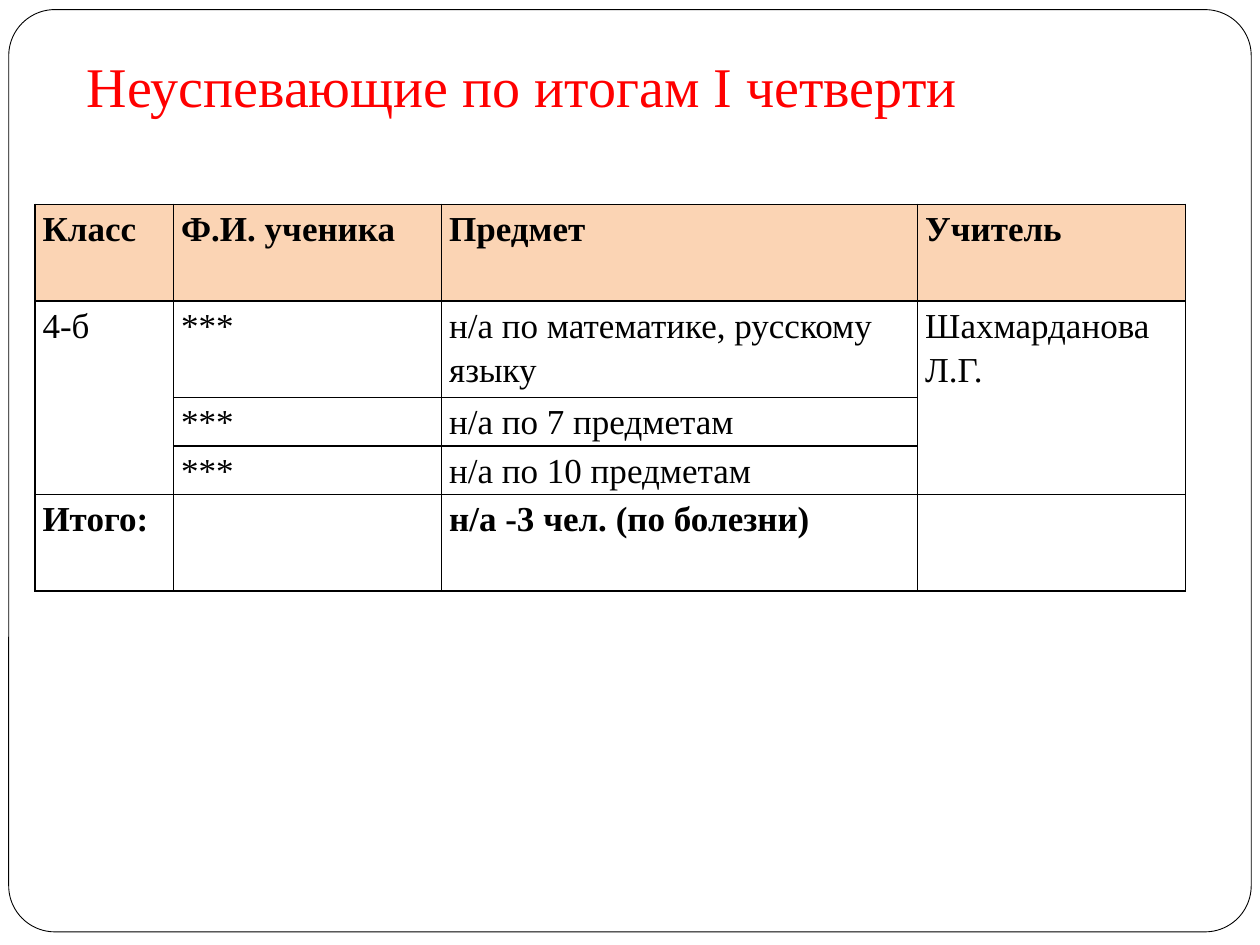
from dataclasses import dataclass

from lxml.etree import SubElement
from pptx import Presentation
from pptx.dml.color import RGBColor
from pptx.enum.shapes import MSO_SHAPE
from pptx.enum.text import MSO_AUTO_SIZE
from pptx.oxml.ns import qn
from pptx.util import Pt


@dataclass(frozen=True)
class Theme:
    font: str = "Times New Roman"
    ink: str = "000000"
    paper: str = "FFFFFF"
    accent: str = "FF0000"
    header: str = "FBD4B4"
    title_size: float = 32
    table_size: float = 20
    frame_line: float = 0.5
    border: float = 1


class SlideBuilder:
    """Draws the elements of one slide in a shared theme."""

    def __init__(self, slide, theme):
        self.slide = slide
        self.theme = theme

    def add_text(self, text_frame, text, size, color, bold=False):
        run = text_frame.paragraphs[0].add_run()
        run.text = text
        for name, value in {"name": self.theme.font, "size": Pt(size), "bold": bold}.items():
            setattr(run.font, name, value)
        run.font.color.rgb = RGBColor.from_string(color)

    def frame(self, left, top, width, height, rounding):
        border = self.slide.shapes.add_shape(
            MSO_SHAPE.ROUNDED_RECTANGLE, Pt(left), Pt(top), Pt(width), Pt(height))
        border.adjustments[0] = rounding
        border.shadow.inherit = False
        border.fill.solid()
        border.fill.fore_color.rgb = RGBColor.from_string(self.theme.paper)
        border.line.color.rgb = RGBColor.from_string(self.theme.ink)
        border.line.width = Pt(self.theme.frame_line)

    def title(self, left, top, width, height, text):
        heading = self.slide.shapes.add_textbox(Pt(left), Pt(top), Pt(width), Pt(height))
        layout = {"word_wrap": False, "auto_size": MSO_AUTO_SIZE.SHAPE_TO_FIT_TEXT}
        for name, value in layout.items():
            setattr(heading.text_frame, name, value)
        self.add_text(heading.text_frame, text, self.theme.title_size, self.theme.accent)

    def outline(self, cell):
        properties = cell._tc.get_or_add_tcPr()
        for position, side in enumerate(("lnL", "lnR", "lnT", "lnB")):
            line = SubElement(properties, qn(f"a:{side}"), w=str(Pt(self.theme.border)))
            SubElement(SubElement(line, qn("a:solidFill")), qn("a:srgbClr"), val=self.theme.ink)
            properties.insert(position, line)

    def table(self, left, top, widths, heights, rows, bold_rows, merged_columns, merged_rows):
        grid = self.slide.shapes.add_table(
            len(heights), len(widths), Pt(left), Pt(top),
            Pt(sum(widths)), Pt(sum(heights))).table
        grid.first_row = grid.horz_banding = False
        for column, width in zip(grid.columns, widths):
            column.width = Pt(width)
        for row, height in zip(grid.rows, heights):
            row.height = Pt(height)
        margins = {"margin_left": Pt(4.3), "margin_right": Pt(4.3),
                   "margin_top": 0, "margin_bottom": 0}
        for row_index, texts in enumerate(rows):
            for column_index, text in enumerate(texts):
                cell = grid.cell(row_index, column_index)
                for name, value in margins.items():
                    setattr(cell, name, value)
                if row_index == 0:
                    cell.fill.solid()
                    cell.fill.fore_color.rgb = RGBColor.from_string(self.theme.header)
                else:
                    cell.fill.background()
                self.outline(cell)
                cell.text_frame.paragraphs[0].line_spacing = 1.15
                if text:
                    self.add_text(cell.text_frame, text, self.theme.table_size,
                                  self.theme.ink, row_index in bold_rows)
        first, last = merged_rows
        for column_index in merged_columns:
            grid.cell(first, column_index).merge(grid.cell(last, column_index))


def main():
    presentation = Presentation()
    presentation.slide_width, presentation.slide_height = Pt(720), Pt(540)
    slide = presentation.slides.add_slide(presentation.slide_layouts[6])
    builder = SlideBuilder(slide, Theme())
    builder.frame(5, 5.5, 710, 527, 0.05)
    builder.title(42.5, 26, 517, 46, "Неуспевающие по итогам I четверти")

    single_line = 27.6
    double_line = 2 * single_line
    builder.table(
        20, 116.8,
        widths=[79.2, 153.2, 272, 153.2],
        heights=[double_line, double_line, single_line, single_line, double_line],
        rows=[
            ["Класс", "Ф.И. ученика", "Предмет", "Учитель"],
            ["4-б", "***", "н/а по математике, русскому языку", "Шахмарданова Л.Г."],
            ["", "***", "н/а по 7 предметам", ""],
            ["", "***", "н/а по 10 предметам", ""],
            ["Итого:", "", "н/а -3 чел. (по болезни)", ""],
        ],
        bold_rows=(0, 4), merged_columns=(0, 3), merged_rows=(1, 3))
    presentation.save("out.pptx")


if __name__ == "__main__":
    main()
